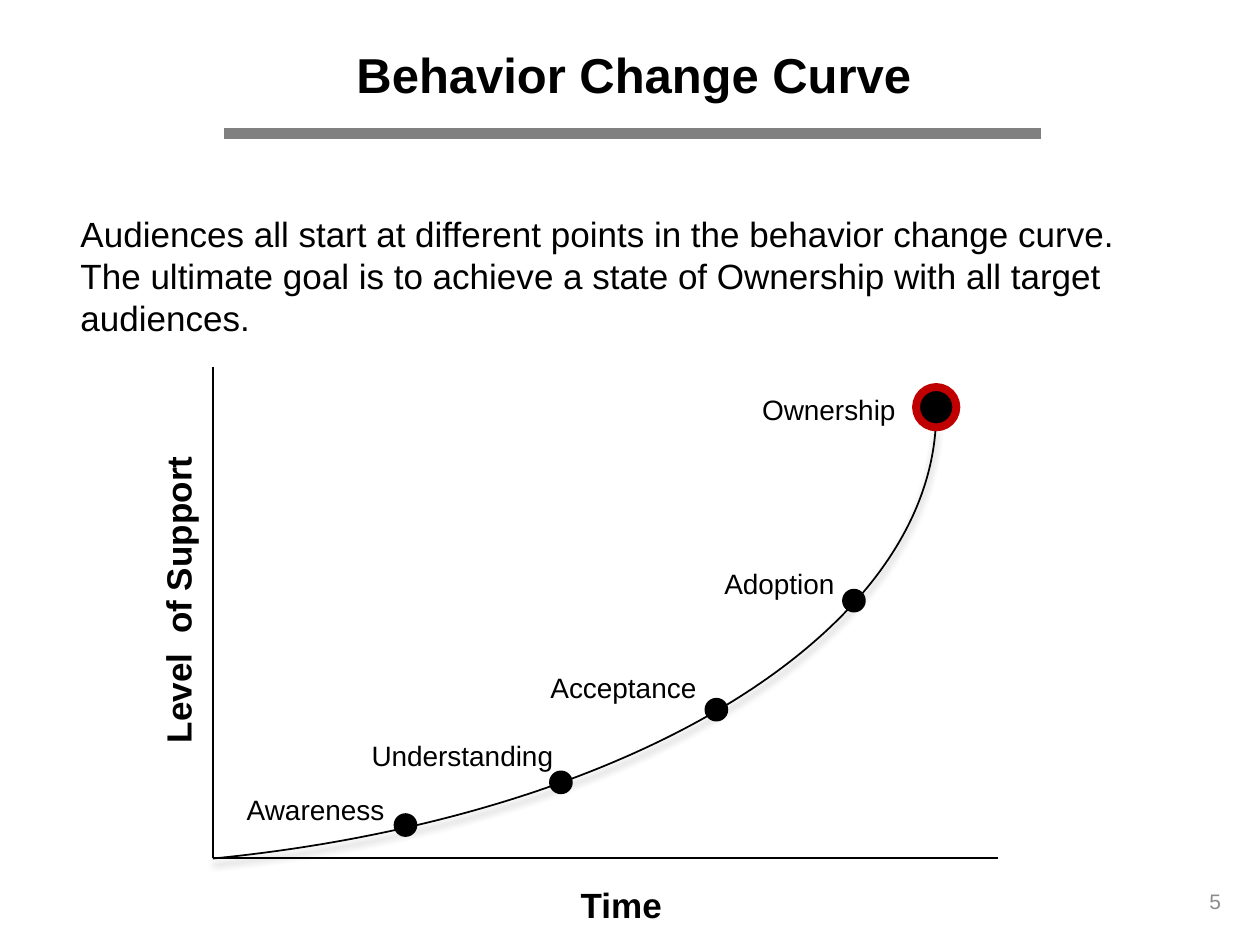
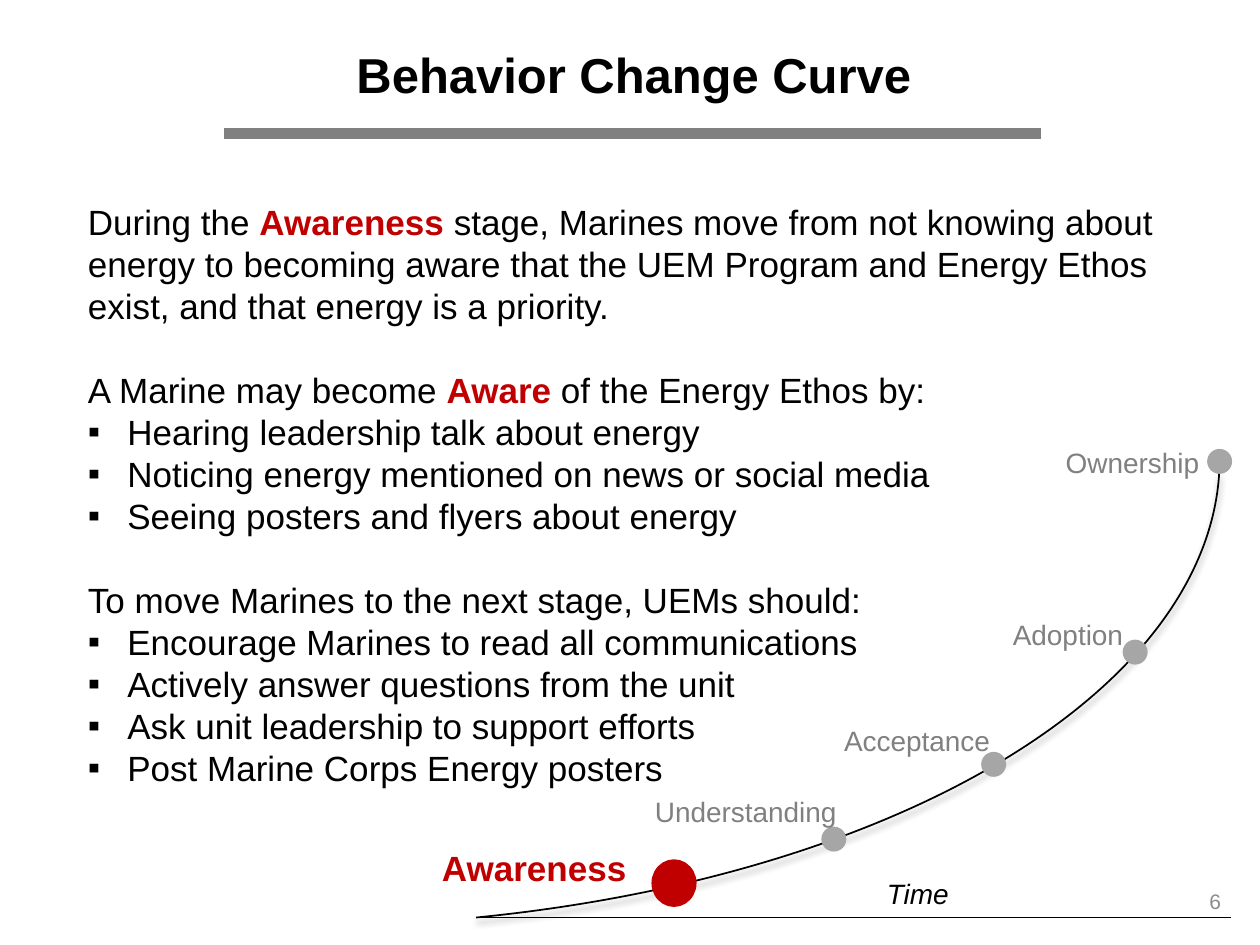
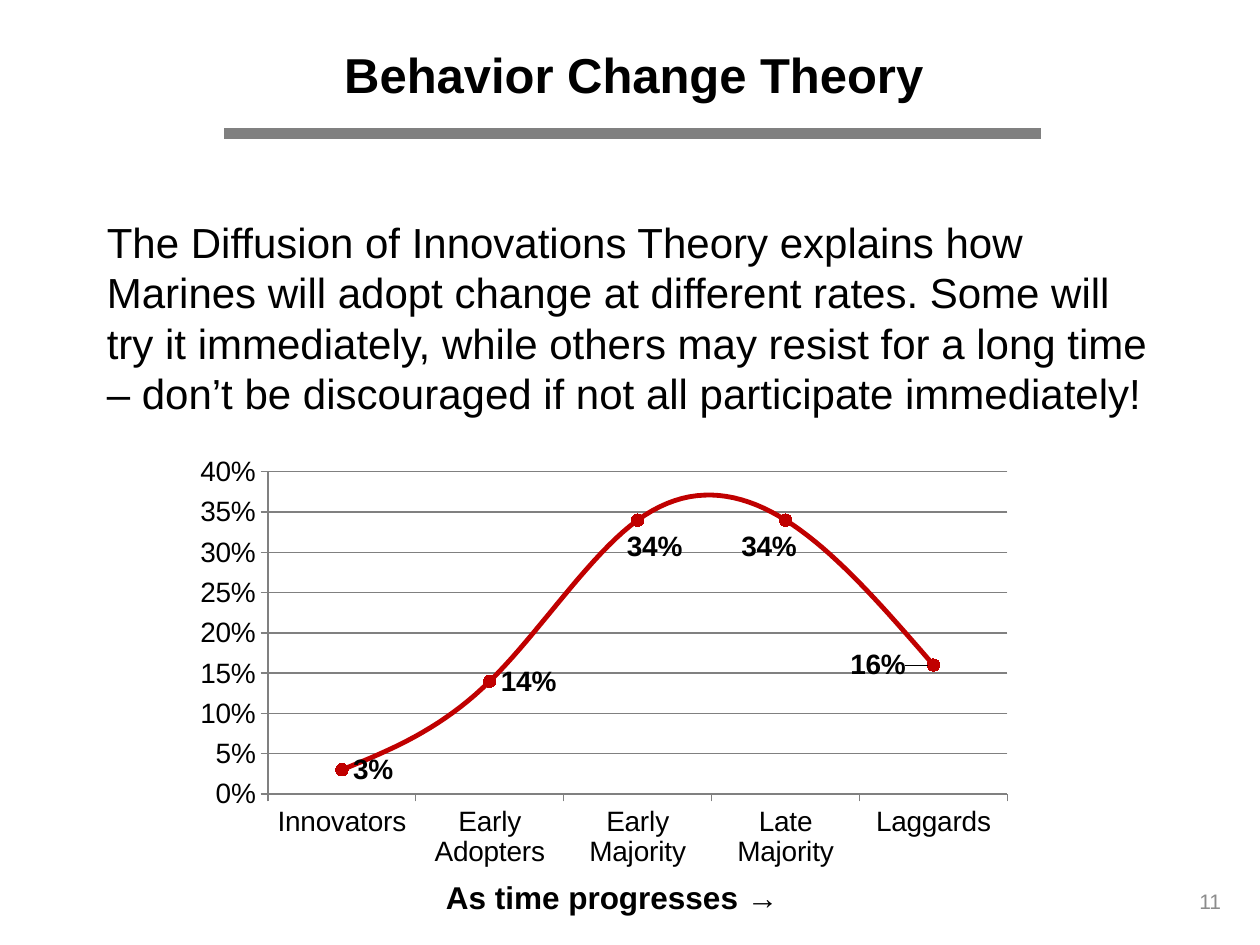
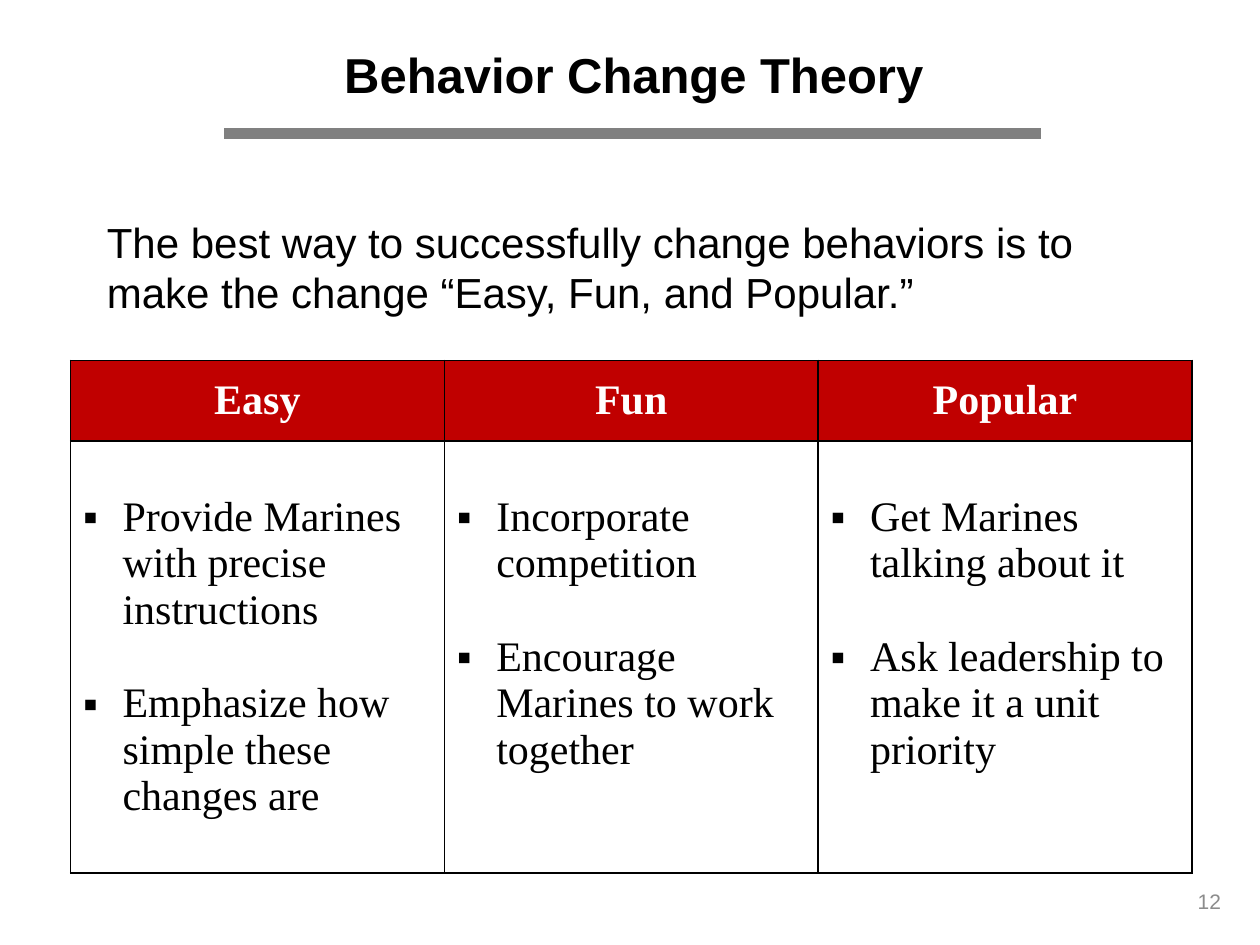
"""Builds four slides on the behavior change curve and the theory behind it."""
from dataclasses import dataclass
from typing import NamedTuple

from lxml.etree import SubElement
from pptx import Presentation
from pptx.chart.data import CategoryChartData
from pptx.dml.color import RGBColor
from pptx.enum.chart import XL_CHART_TYPE as ChartType
from pptx.enum.chart import XL_LABEL_POSITION as LabelAt
from pptx.enum.chart import XL_MARKER_STYLE as Marker
from pptx.enum.chart import XL_TICK_MARK as Tick
from pptx.enum.shapes import MSO_CONNECTOR as Connector
from pptx.enum.shapes import MSO_SHAPE as Preset
from pptx.enum.text import MSO_ANCHOR as Anchor
from pptx.enum.text import PP_ALIGN as Align
from pptx.oxml import parse_xml
from pptx.oxml.ns import nsdecls, qn
from pptx.util import Inches, Pt

COLORS = {
    "ink": "000000",
    "paper": "FFFFFF",
    "accent": "C00000",
    "band": "808080",
    "dot": "A6A6A6",
    "page": "8C8C8C",
}
FONT, TABLE_FONT = "Arial", "Times New Roman"
WIDTH, HEIGHT = Inches(10), Inches(7.5)
COLUMNS, ROWS = 100, 75
BULLET_INDENT = Pt(22.5)


class Area(NamedTuple):
    """A rectangle in grid columns and rows."""
    left: float
    top: float
    width: float
    height: float


class Look(NamedTuple):
    """How a run of text is set."""
    size: float = 20
    color: str = "ink"
    bold: bool = False
    italic: bool = False
    font: str = FONT


class Line(NamedTuple):
    """A paragraph whose odd-numbered spans are accented."""
    spans: tuple[str, ...]
    bullet: bool = False
    gap: float = 0


class Label(NamedTuple):
    """Text set beside the curve."""
    text: str
    area: Area
    look: Look
    align: Align = Align.LEFT


class Dot(NamedTuple):
    """A marker's look and size in columns and rows."""
    fill: str
    edge: str
    edge_width: float
    width: float
    height: float


class Adopters(NamedTuple):
    """A group's share, with its label's side and sideways shift."""
    name: str
    share: float
    side: LabelAt
    shift: float = 0


@dataclass
class Curve:
    """One drawing of the curve, with its dots and axes."""
    arc: Area
    dots: tuple[Dot, ...]
    last_row_share: float
    axes: tuple[tuple[float, float, float, float], ...]
    labels: tuple[Label, ...]


DOT_SHARES = ((70.3, 95.4), (79, 90.7), (87.7, 82.7), (95.4, 70.7))
TITLE_AREA = Area(15.7, 2.5, 69.2, 6.7)
PAGE_AREA = Area(66.3, 69.5, 31.6, 4)
BODY_AREA = Area(7.5, 16.7, 85, 20)
PLOT_LAYOUT = {"x": 0.1, "y": 0.06, "w": 0.88, "h": 0.75}

SMALL = Look(16)
FADED = Look(16, "band")
BOLD = Look(bold=True)
ACCENT = Look(color="accent", bold=True)
BLACK_DOT = Dot("ink", "ink", 2, 1.6, 1.6)
GRAY_DOT = Dot("dot", "dot", 2, 1.7, 1.7)

FULL_CURVE = Curve(
    arc=Area(-67.5, -3.3, 141.8, 72.1),
    dots=(BLACK_DOT,) * 4 + (Dot("ink", "accent", 4.5, 3.2, 3.2),),
    last_row_share=49.4,
    axes=((16.9, 68.1, 79.2, 68.1), (16.9, 68.1, 16.9, 29.1)),
    labels=(
        Label("Understanding", Area(28.5, 58.1, 17.8, 3.6), SMALL),
        Label("Awareness", Area(18.6, 62.4, 13.8, 3.6), SMALL),
        Label("Acceptance", Area(42.7, 52.7, 13.8, 3.6), SMALL),
        Label("Adoption", Area(56.5, 44.5, 13.8, 3.6), SMALL),
        Label("Ownership", Area(59.5, 30.7, 13.8, 3.6), SMALL),
        Label("Time", Area(45.1, 69.6, 13.8, 4.3), BOLD),
    ),
)
AWARENESS_CURVE = Curve(
    arc=Area(-49, -0.7, 145.8, 74.2),
    dots=(Dot("accent", "accent", 2, 3.3, 3.5),) + (GRAY_DOT,) * 4,
    last_row_share=50.3,
    axes=((37.8, 72.8, 97.7, 72.8),),
    labels=(
        Label("Understanding", Area(51, 62.6, 18.3, 3.7), FADED),
        Label("Awareness", Area(33.3, 66.7, 18.2, 4.4), ACCENT, Align.CENTER),
        Label("Acceptance", Area(66, 56.9, 14.2, 3.7), FADED),
        Label("Adoption", Area(79.4, 48.5, 14.2, 3.7), FADED),
        Label("Ownership", Area(83.6, 34.9, 14.2, 3.7), FADED),
        Label("Time", Area(69.4, 69.1, 14.2, 3.7), Look(16, italic=True)),
    ),
)
AWARENESS_LINES = (
    Line(("During the ", "Awareness ", "stage, Marines move from not knowing about energy to "
          "becoming aware that the UEM Program and Energy Ethos exist, and that energy is a "
          "priority.")),
    Line(("A Marine may become ", "Aware ", "of the Energy Ethos by:"), gap=24),
    Line(("Hearing leadership talk about energy",), True),
    Line(("Noticing energy mentioned on news or social media",), True),
    Line(("Seeing posters and flyers about energy",), True),
    Line(("To move Marines to the next stage, UEMs should:",), gap=24),
    Line(("Encourage Marines to read all communications",), True),
    Line(("Actively answer questions from the unit",), True),
    Line(("Ask unit leadership to support efforts",), True),
    Line(("Post Marine Corps Energy posters",), True),
)
ADOPTER_GROUPS = (
    Adopters("Innovators", 0.03, LabelAt.RIGHT),
    Adopters("Early Adopters", 0.14, LabelAt.RIGHT),
    Adopters("Early Majority", 0.34, LabelAt.BELOW, 0.02),
    Adopters("Late Majority", 0.34, LabelAt.BELOW, -0.02),
    Adopters("Laggards", 0.16, LabelAt.LEFT, -0.02),
)
APPROACHES = {
    "Easy": ("Provide Marines with precise instructions", "Emphasize how simple these changes are"),
    "Fun": ("Incorporate competition", "Encourage Marines to work together"),
    "Popular": ("Get Marines talking about it", "Ask leadership to make it a unit priority"),
}


def column(count: float) -> int:
    """Returns the length of some grid columns."""
    return round(WIDTH * count / COLUMNS)


def row(count: float) -> int:
    """Returns the length of some grid rows."""
    return round(HEIGHT * count / ROWS)


def place(area: Area) -> tuple[int, int, int, int]:
    """Turns a grid area into slide lengths."""
    return column(area.left), row(area.top), column(area.width), row(area.height)


def color(name: str) -> RGBColor:
    """Looks up a named colour."""
    return RGBColor.from_string(COLORS[name])


def style(font, look: Look) -> None:
    """Applies a look to a font."""
    font.name, font.size = look.font, Pt(look.size)
    font.bold, font.italic = look.bold, look.italic
    font.color.rgb = color(look.color)


def add_bullet(para) -> None:
    """Gives a paragraph a square bullet and a hanging indent."""
    props = para._p.get_or_add_pPr()
    props.set("marL", str(BULLET_INDENT))
    props.set("indent", str(-BULLET_INDENT))
    SubElement(props, qn("a:buFont")).set("typeface", FONT)
    SubElement(props, qn("a:buChar")).set("char", "▪")


def write_lines(frame, lines, look: Look) -> None:
    """Fills a text frame with paragraphs of plain and accented spans."""
    for index, line in enumerate(lines):
        para = frame.add_paragraph() if index else frame.paragraphs[0]
        if line.gap:
            para.space_before = Pt(line.gap)
        if line.bullet:
            add_bullet(para)
        for position, text in enumerate(line.spans):
            span = para.add_run()
            span.text = text
            style(span.font, ACCENT if position % 2 else look)


def add_box(page, area: Area):
    """Adds an empty wrapping text box."""
    box = page.shapes.add_textbox(*place(area))
    box.text_frame.word_wrap = True
    return box


def add_text(page, text: str, area: Area, look: Look, align=Align.LEFT, anchor=Anchor.TOP):
    """Adds a text box with one paragraph."""
    box = add_box(page, area)
    box.text_frame.text = text
    box.text_frame.vertical_anchor = anchor
    para = box.text_frame.paragraphs[0]
    para.alignment = align
    style(para.runs[0].font, look)
    return box


def add_line(page, ends, ink: str, width: float) -> None:
    """Draws a straight line between two grid points."""
    left, top, right, bottom = ends
    line = page.shapes.add_connector(
        Connector.STRAIGHT, column(left), row(top), column(right), row(bottom))
    line.line.color.rgb, line.line.width = color(ink), Pt(width)
    SubElement(line._element.spPr, qn("a:effectLst"))


def add_page(deck, title: str, number: int):
    """Adds a slide with the shared title, band and page number."""
    page = deck.slides.add_slide(deck.slide_layouts[6])
    add_line(page, (17.8, 10.6, 82.6, 10.6), "band", 6)
    add_text(page, title, TITLE_AREA, Look(28, bold=True), Align.CENTER, Anchor.MIDDLE)
    add_text(page, str(number), PAGE_AREA, Look(12, "page"), Align.RIGHT, Anchor.MIDDLE)
    return page


def add_arc(page, area: Area) -> None:
    """Draws the rising curve with its soft shadow."""
    arc = page.shapes.add_shape(Preset.ARC, *place(area))
    arc.adjustments[0], arc.adjustments[1] = 0.523, 41.479
    arc.fill.background()
    arc.line.color.rgb, arc.line.width = color("ink"), Pt(1)
    arc.shadow.inherit = False
    arc._element.spPr.find(qn("a:effectLst")).append(parse_xml(
        f'<a:outerShdw {nsdecls("a")} blurRad="{Pt(4)}" dist="{Pt(3)}" dir="5400000" '
        f'rotWithShape="0"><a:srgbClr val="{COLORS["ink"]}"><a:alpha val="40000"/>'
        '</a:srgbClr></a:outerShdw>'))


def add_dot(page, dot: Dot, center_column: float, center_row: float) -> None:
    """Draws a stage marker around a grid point."""
    area = Area(center_column - dot.width / 2, center_row - dot.height / 2, dot.width, dot.height)
    shape = page.shapes.add_shape(Preset.OVAL, *place(area))
    shape.shadow.inherit = False
    shape.fill.solid()
    shape.fill.fore_color.rgb = color(dot.fill)
    shape.line.color.rgb, shape.line.width = color(dot.edge), Pt(dot.edge_width)


def add_curve(page, curve: Curve) -> None:
    """Draws the curve, its dots, labels and axes."""
    arc = curve.arc
    add_arc(page, arc)
    shares = DOT_SHARES + ((100, curve.last_row_share),)
    for dot, (across, down) in zip(curve.dots, shares):
        add_dot(page, dot, arc.left + arc.width * across / 100, arc.top + arc.height * down / 100)
    for label in curve.labels:
        add_text(page, *label)
    for axis in curve.axes:
        add_line(page, axis, "ink", 0.75)


def add_support_label(page) -> None:
    """Writes the upright axis label with a wide gap after its first word."""
    box = add_text(page, "Level", Area(0.3, 44, 27.6, 4.3), BOLD)
    box.rotation = 270
    para = box.text_frame.paragraphs[0]
    for text in (" ", "of Support"):
        span = para.add_run()
        span.text = text
        style(span.font, BOLD)
    para.runs[1]._r.get_or_add_rPr().set("spc", "556")


def style_axis(axis) -> None:
    """Sets an axis's text, line and ticks."""
    style(axis.tick_labels.font, SMALL)
    axis.format.line.color.rgb = color("band")
    axis.major_tick_mark, axis.minor_tick_mark = Tick.OUTSIDE, Tick.NONE


def layout(settings: dict):
    """Makes a manual chart layout."""
    inner = "".join(f'<c:{key} val="{value}"/>' for key, value in settings.items())
    return parse_xml(
        f'<c:layout {nsdecls("c")}><c:manualLayout>{inner}</c:manualLayout></c:layout>')


def add_adoption_chart(page, area: Area) -> None:
    """Charts the share of people in each adopter group."""
    data = CategoryChartData(number_format="0%")
    data.categories = [group.name for group in ADOPTER_GROUPS]
    data.add_series("Series 1", [group.share for group in ADOPTER_GROUPS])
    chart = page.shapes.add_chart(ChartType.LINE_MARKERS, *place(area), data).chart
    chart.has_legend = chart.has_title = False
    style(chart.font, Look(18))
    for axis in (chart.category_axis, chart.value_axis):
        style_axis(axis)
    scale = chart.value_axis
    scale.minimum_scale, scale.maximum_scale, scale.major_unit = 0, 0.4, 0.05
    scale.tick_labels.number_format = "0%"
    scale.tick_labels.number_format_is_linked = False
    scale.major_gridlines.format.line.color.rgb = color("band")

    plot = chart.plots[0]
    plot.vary_by_categories = False
    series = plot.series[0]
    series.smooth = True
    series.format.line.color.rgb, series.format.line.width = color("accent"), Pt(2.75)
    series.marker.style, series.marker.size = Marker.CIRCLE, 7
    series.marker.format.fill.solid()
    series.marker.format.fill.fore_color.rgb = color("accent")
    series.marker.format.line.color.rgb = color("accent")
    labels = series.data_labels
    labels.show_value = True
    labels.number_format = "0%"
    labels.number_format_is_linked = False
    for index, group in enumerate(ADOPTER_GROUPS):
        label = series.points[index].data_label
        style(label.font, Look(16, bold=True))
        label.position = group.side
        if group.shift:
            label_xml = labels._element.findall(qn("c:dLbl"))[index]
            label_xml.insert(1, layout({"x": group.shift, "y": 0}))

    plot_area = chart._chartSpace.chart.plotArea
    for old in plot_area.findall(qn("c:layout")):
        plot_area.remove(old)
    edges = {"layoutTarget": "inner", "xMode": "edge", "yMode": "edge"}
    plot_area.insert(0, layout(edges | PLOT_LAYOUT))


def style_cell(cell, fill: str) -> None:
    """Gives a cell thin borders and a fill."""
    props = cell._tc.get_or_add_tcPr()
    for side in ("lnL", "lnR", "lnT", "lnB"):
        props.append(parse_xml(
            f'<a:{side} {nsdecls("a")} w="{Pt(1)}"><a:solidFill>'
            f'<a:srgbClr val="{COLORS["ink"]}"/></a:solidFill></a:{side}>'))
    cell.fill.solid()
    cell.fill.fore_color.rgb = color(fill)


def add_approach_table(page, area: Area) -> None:
    """Tabulates the ways to change behavior."""
    table = page.shapes.add_table(2, len(APPROACHES), *place(area)).table
    table.horz_banding = False
    header_height = 6.4
    table.rows[0].height = row(header_height)
    table.rows[1].height = row(area.height - header_height)
    for index, (name, advice) in enumerate(APPROACHES.items()):
        header, body = table.cell(0, index), table.cell(1, index)
        style_cell(header, "accent")
        style_cell(body, "paper")
        header.text_frame.text = name
        header.vertical_anchor = Anchor.MIDDLE
        para = header.text_frame.paragraphs[0]
        para.alignment = Align.CENTER
        style(para.runs[0].font, Look(24, "paper", True, font=TABLE_FONT))
        body.margin_top = row(4.2)
        lines = [Line((text,), True, 27 if order else 0) for order, text in enumerate(advice)]
        write_lines(body.text_frame, lines, Look(24, font=TABLE_FONT))


def main() -> None:
    """Builds and saves the deck."""
    deck = Presentation()
    deck.slide_width, deck.slide_height = WIDTH, HEIGHT

    page = add_page(deck, "Behavior Change Curve", 5)
    add_curve(page, FULL_CURVE)
    add_support_label(page)
    add_text(page, "Audiences all start at different points in the behavior change curve. "
             "The ultimate goal is to achieve a state of Ownership with all target audiences.",
             Area(5.4, 16.4, 89.2, 11.1), Look())

    page = add_page(deck, "Behavior Change Curve", 6)
    box = add_box(page, Area(6, 15.4, 86.7, 58.2))
    write_lines(box.text_frame, AWARENESS_LINES, Look())
    add_curve(page, AWARENESS_CURVE)

    page = add_page(deck, "Behavior Change Theory", 11)
    add_text(page, "The Diffusion of Innovations Theory explains how Marines will adopt change at "
             "different rates. Some will try it immediately, while others may resist for a long "
             "time – don’t be discouraged if not all participate immediately!",
             BODY_AREA, Look(24))
    add_adoption_chart(page, Area(14.6, 35.4, 66.7, 34.1))
    caption = add_text(page, "As time progresses →", Area(34.4, 69.2, 32.9, 4), Look(18, bold=True))
    caption.fill.solid()
    caption.fill.fore_color.rgb = color("paper")

    page = add_page(deck, "Behavior Change Theory", 12)
    add_text(page, "The best way to successfully change behaviors is to make the change "
             "“Easy, Fun, and Popular.”", BODY_AREA, Look(24))
    add_approach_table(page, Area(5.6, 28.6, 89, 40.7))

    deck.save("out.pptx")


if __name__ == "__main__":
    main()
